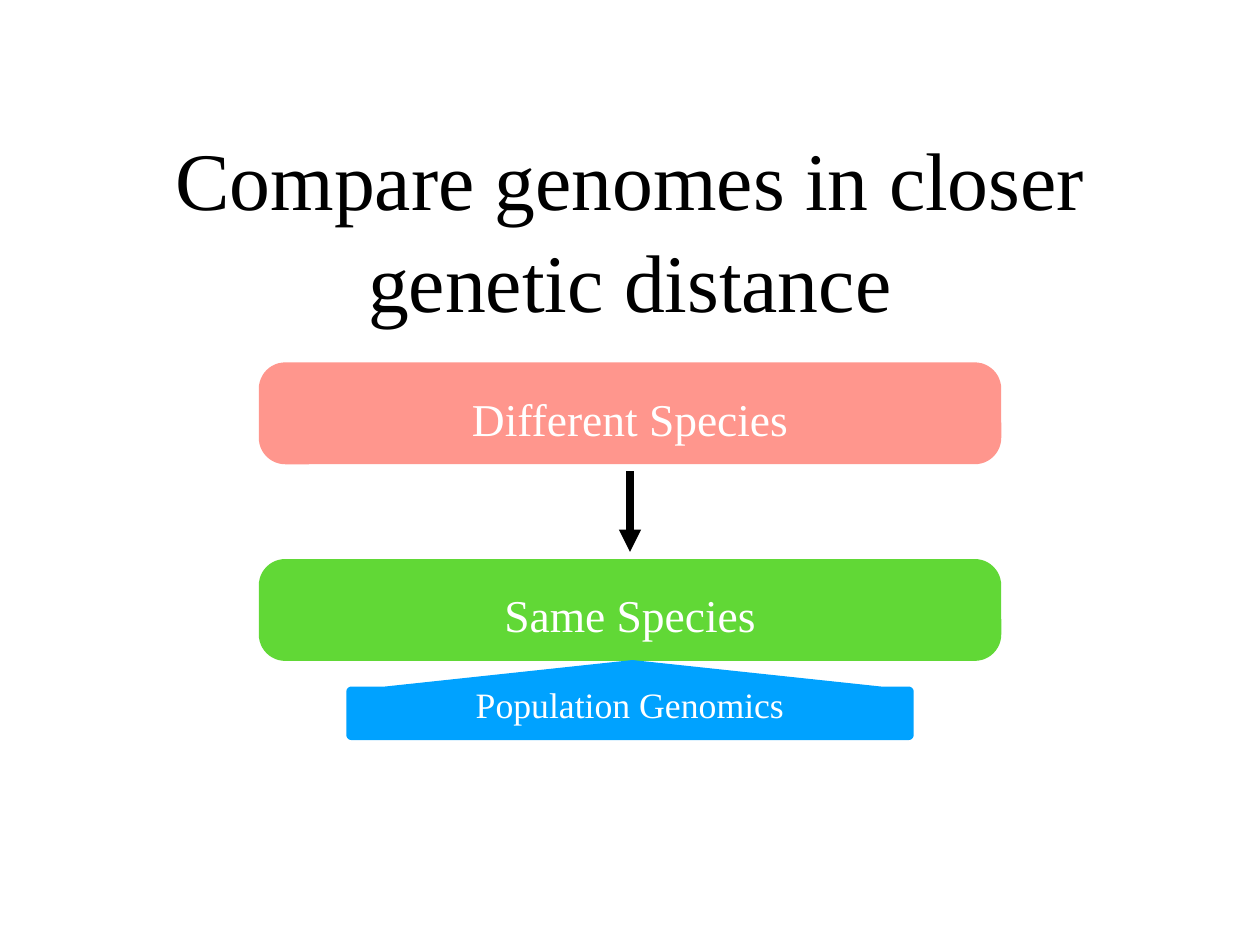
from math import cos, radians, sin

from lxml.etree import SubElement
from pptx import Presentation
from pptx.dml.color import RGBColor as RGB
from pptx.enum.shapes import MSO_CONNECTOR as LINE, MSO_SHAPE as SHAPE
from pptx.enum.text import MSO_ANCHOR as ANCHOR, MSO_AUTO_SIZE as AUTO, PP_ALIGN as ALIGN
from pptx.oxml.ns import qn
from pptx.util import Pt

TITLE = "Compare genomes in closer genetic distance"
STEPS = [("Different Species", "red"), ("Same Species", "green")]
NOTE = "Population Genomics"

COLORS = {"black": "000000", "white": "FFFFFF", "red": "FF968D",
          "green": "61D836", "blue": "00A2FF"}
FONT = "Times New Roman"

WIDE, HIGH = 1024, 768
MID = WIDE / 2
BOX_W, BOX_H, BOX_TOP, PITCH = 603.4, 82.8, 294.5, 159.8
GAP = 5.8
NOTE_W, NOTE_TOP, NOTE_END, RADIUS = 461, 558, 601.4, 4
TIP = (514, 536.4)
BASE = (312.5, 716.4)
INSET = 4.5


def color(name):
    return RGB.from_string(COLORS[name])


def write(shape, text, size, name="white"):
    """Centre the text, set a little low to suit the font's tall ascent."""
    frame = shape.text_frame
    frame.text = text
    look = {"word_wrap": True, "auto_size": AUTO.NONE, "vertical_anchor": ANCHOR.MIDDLE,
            "margin_left": Pt(INSET), "margin_right": Pt(INSET),
            "margin_bottom": Pt(INSET), "margin_top": Pt(INSET + 0.16 * size)}
    for key, value in look.items():
        setattr(frame, key, value)
    para = frame.paragraphs[0]
    para.alignment = ALIGN.CENTER
    para.line_spacing = 1.04
    font = para.runs[0].font
    for key, value in {"name": FONT, "size": Pt(size), "bold": False}.items():
        setattr(font, key, value)
    font.color.rgb = color(name)


def paint(shape, name):
    shape.shadow.inherit = False
    shape.fill.solid()
    shape.fill.fore_color.rgb = color(name)
    shape.line.fill.background()


def add_title(slide):
    title = slide.shapes.title
    place = {"left": 75, "top": 94.3, "width": 874, "height": 170}
    for key, value in place.items():
        setattr(title, key, Pt(value))
    write(title, TITLE, 66.4, "black")


def add_step(slide, top, text, name):
    box = slide.shapes.add_shape(SHAPE.ROUNDED_RECTANGLE, Pt(MID - BOX_W / 2), Pt(top),
                                 Pt(BOX_W), Pt(BOX_H))
    box.adjustments[0] = 0.26
    paint(box, name)
    write(box, text, 37)


def add_arrow(slide, start, end):
    arrow = slide.shapes.add_connector(LINE.STRAIGHT, Pt(MID), Pt(start), Pt(MID), Pt(end))
    arrow.line.width = Pt(6)
    arrow.line.color.rgb = color("black")
    SubElement(arrow.line._get_or_add_ln(), qn("a:tailEnd"), type="triangle")
    SubElement(arrow._element.spPr, qn("a:effectLst"))


def arc(x, y, start):
    """Points of a quarter turn, anticlockwise on the slide, about (x, y)."""
    turns = [radians(start - step) for step in range(0, 91, 15)]
    return [(x + RADIUS * cos(t), y + RADIUS * sin(t)) for t in turns]


def add_note(slide):
    left, right = MID - NOTE_W / 2 + RADIUS, MID + NOTE_W / 2 - RADIUS
    top, low = NOTE_TOP + RADIUS, NOTE_END - RADIUS
    points = [(BASE[0], NOTE_TOP), *arc(left, top, 270), *arc(left, low, 180),
              *arc(right, low, 90), *arc(right, top, 0), (BASE[1], NOTE_TOP)]
    form = slide.shapes.build_freeform(Pt(TIP[0]), Pt(TIP[1]))
    form.add_line_segments([(Pt(x), Pt(y)) for x, y in points], close=True)
    note = form.convert_to_shape()
    paint(note, "blue")
    write(note, NOTE, 29)


def main():
    deck = Presentation()
    deck.slide_width, deck.slide_height = Pt(WIDE), Pt(HIGH)
    slide = deck.slides.add_slide(deck.slide_layouts[5])
    add_title(slide)
    for row, (text, name) in enumerate(STEPS):
        top = BOX_TOP + row * PITCH
        add_step(slide, top, text, name)
        if row:
            add_arrow(slide, top - PITCH + BOX_H + GAP, top - GAP)
    add_note(slide)
    deck.save("out.pptx")


if __name__ == "__main__":
    main()
